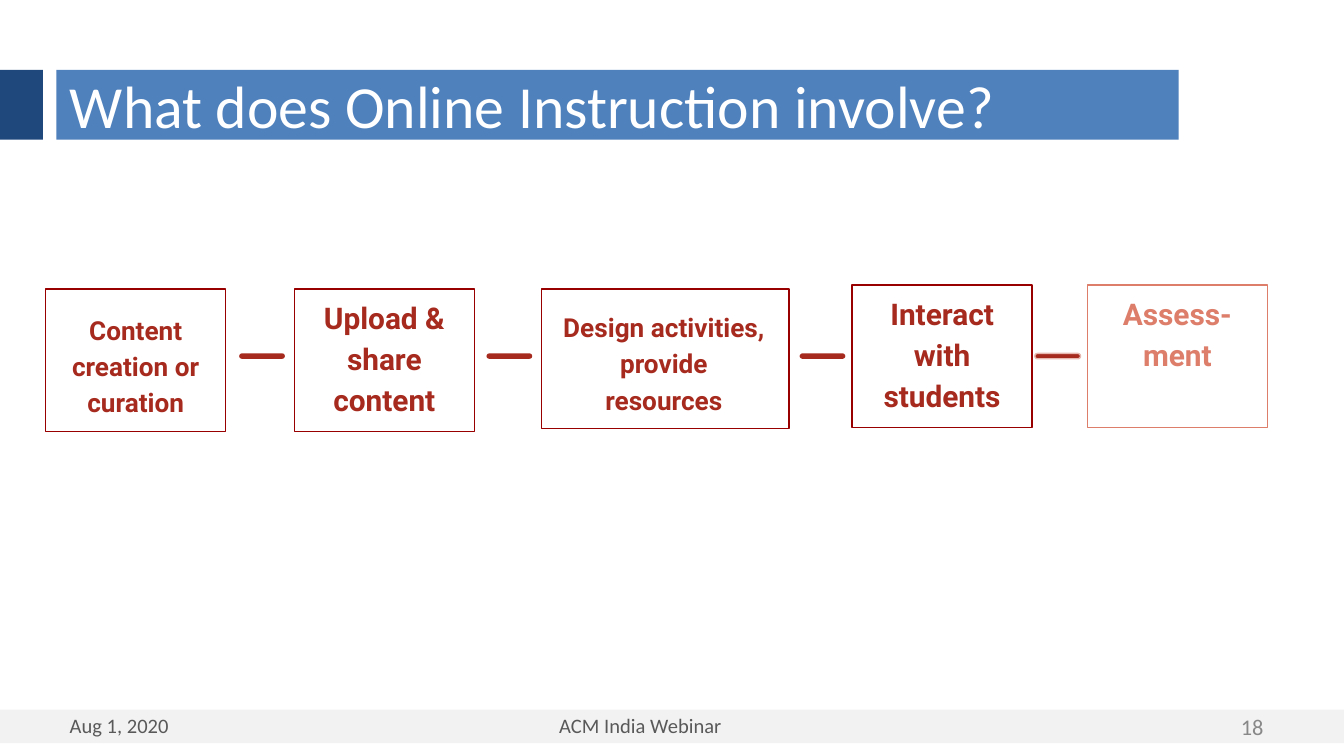
from pptx import Presentation
from pptx.dml.color import RGBColor
from pptx.enum.shapes import MSO_SHAPE
from pptx.enum.text import MSO_ANCHOR, MSO_AUTO_SIZE, PP_ALIGN
from pptx.util import Inches, Pt

RED = "A72A1E"
DARK = "980000"
PINK = "DD7E6B"
GREY = "595959"
STEPS = [
    (0.34, 2.15, 1.34, 1.06, 14, ["Content creation or curation"]),
    (2.19, 2.15, 1.34, 1.06, 16, ["Upload & share content"]),
    (4.03, 2.15, 1.84, 1.04, 14, ["Design activities, provide", "resources"]),
    (6.34, 2.12, 1.34, 1.06, 16, ["Interact with students"]),
]


def color(code):
    return RGBColor.from_string(code)


def place(item, box):
    item.left, item.top, item.width, item.height = map(Inches, box)


def write(item, lines, size, ink, font="Calibri", bold=False, align=PP_ALIGN.LEFT,
          anchor=MSO_ANCHOR.TOP, inset=(0.1, 0.05, 0.1, 0.05), space=1):
    frame = item.text_frame
    frame.text = "\n".join(lines)
    frame.word_wrap = True
    frame.auto_size = MSO_AUTO_SIZE.NONE
    frame.vertical_anchor = anchor
    (frame.margin_left, frame.margin_top,
     frame.margin_right, frame.margin_bottom) = map(Inches, inset)
    for para in frame.paragraphs:
        para.alignment = align
        para.line_spacing = space
        for run in para.runs:
            run.font.name = font
            run.font.size = Pt(size)
            run.font.bold = bold
            run.font.color.rgb = color(ink)


def add_block(slide, box, fill=None, line=None, kind=MSO_SHAPE.RECTANGLE):
    block = slide.shapes.add_shape(kind, *map(Inches, box))
    block.shadow.inherit = False
    if fill:
        block.fill.solid()
        block.fill.fore_color.rgb = color(fill)
    else:
        block.fill.background()
    if line:
        block.line.color.rgb = color(line)
        block.line.width = Pt(0.75)
    else:
        block.line.fill.background()
    return block


def add_title(slide, text):
    title = slide.shapes.title
    place(title, (0.42, 0.52, 8.35, 0.52))
    title.fill.solid()
    title.fill.fore_color.rgb = color("4F81BD")
    write(title, [text], 32, "FFFFFF", anchor=MSO_ANCHOR.MIDDLE)


def add_label(slide, box, text, size, ink, **style):
    label = slide.shapes.add_textbox(*map(Inches, box))
    write(label, [text], size, ink, **style)


def add_step(slide, box, size, lines, ink=RED, line=DARK, sides=(0.1, 0.1), base=0.1):
    step = add_block(slide, box, line=line)
    write(step, lines, size, ink, "Roboto", True, PP_ALIGN.CENTER,
          MSO_ANCHOR.BOTTOM, (sides[0], 0.1, sides[1], base), 1.15)


def add_dash(slide, left, line=None):
    dash = add_block(slide, (left, 2.63, 0.34, 0.04), RED, line,
                     MSO_SHAPE.ROUNDED_RECTANGLE)
    dash.adjustments[0] = 0.5


def main():
    deck = Presentation()
    deck.slide_width, deck.slide_height = Inches(10), Inches(10 * 9 / 16)
    slide = deck.slides.add_slide(deck.slide_layouts[5])
    add_title(slide, "What does Online Instruction involve?")
    add_block(slide, (0, 0.52, 0.32, 0.52), "1F497D")
    add_block(slide, (0, 5.28, 10, 0.25), "F2F2F2")
    add_label(slide, (2.42, 5.26, 4.69, 0.24), "ACM India Webinar", 11, GREY,
              align=PP_ALIGN.CENTER)
    add_label(slide, (0.42, 5.26, 1.42, 0.24), "Aug 1, 2020", 11, GREY)
    add_label(slide, (8.88, 5.26, 0.62, 0.3), "18", 12, "888888",
              align=PP_ALIGN.RIGHT, anchor=MSO_ANCHOR.MIDDLE)
    for *box, size, lines in STEPS:
        sides = (0.04, 0.06) if len(lines) > 1 else (0.1, 0.1)
        add_step(slide, box, size, lines, sides=sides)
    add_step(slide, (8.09, 2.12, 1.34, 1.06), 16, ["Assess- ment"], PINK, PINK,
             base=0.41)
    for left in (1.78, 3.62, 5.95):
        add_dash(slide, left)
    add_dash(slide, 7.7, "E6B8AF")
    deck.save("out.pptx")


if __name__ == "__main__":
    main()
